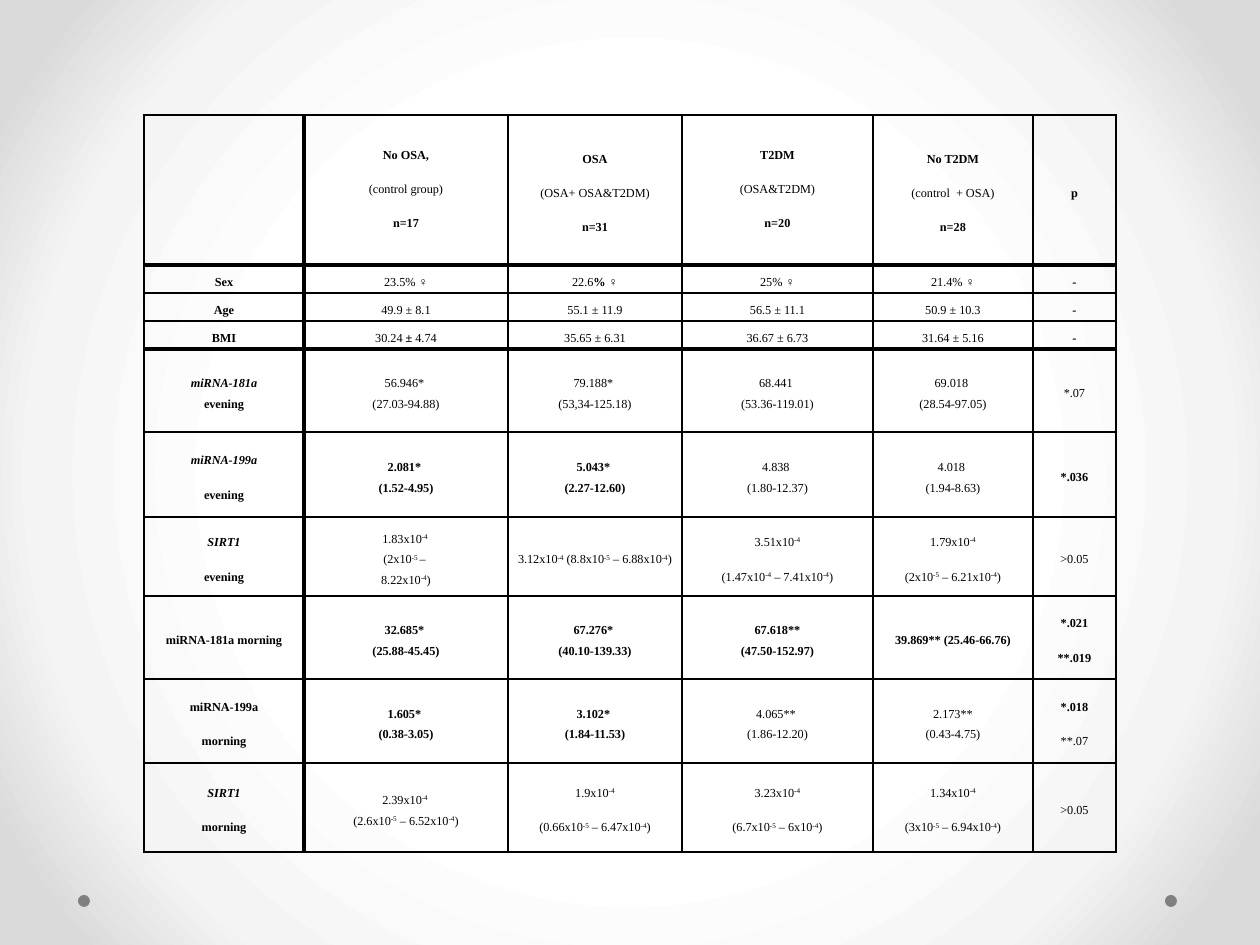
"""Build a slide with a table of miRNA and SIRT1 values by patient group."""
from dataclasses import dataclass

from lxml.etree import SubElement
from pptx import Presentation
from pptx.dml.color import RGBColor
from pptx.enum.shapes import MSO_SHAPE
from pptx.enum.text import MSO_ANCHOR, PP_ALIGN
from pptx.oxml import parse_xml
from pptx.oxml.ns import nsdecls, qn
from pptx.slide import Slide
from pptx.table import _Cell
from pptx.text.text import _Paragraph
from pptx.util import Emu, Pt

SCALE = 914400 / 126
FONT, FONT_SIZE = "Times New Roman", Pt(7)
COLORS = {"ink": "000000", "dot": "808080", "center": "FFFFFF", "middle": "F4F4F4", "edge": "DADADA"}
BOLD, ITALIC, RAISED = "#", "_", "^"
THIN, THICK = Pt(1), Pt(3)
THICK_ROW_LINES, THICK_COLUMN_LINES = {1, 4}, {1}
COLUMN_WIDTHS = [160, 204, 174, 191, 160, 83]
TABLE_LEFT, TABLE_TOP = 144, 115


@dataclass(frozen=True)
class Row:
    """One table row, with | between paragraphs and #, _ and ^ switching bold, italic and superscript."""
    height: int
    label: str
    groups: tuple[str, str, str, str]
    significance: str


@dataclass(frozen=True)
class Dot:
    """A small round mark near the foot of the slide."""
    left: int
    top: int
    diameter: int = 12


ROWS = [
    Row(150, "", ("#No OSA,|#(control group)#|n=17#", "#OSA|#(OSA+ OSA&T2DM)#|n=31#",
                  "#T2DM|#(OSA&T2DM)#|n=20#", "#No T2DM|#(control  + OSA)#|n=28#"), "#p#"),
    Row(28, "Sex", ("23.5% ♀", "22.6#% ♀#", "25%# ♀#", "21.4% ♀"), "#-#"),
    Row(28, "Age", ("49.9 ± 8.1", "55.1 ± 11.9", "56.5 ± 11.1", "50.9 ± 10.3"), "#-#"),
    Row(28, "BMI", ("30.24# ± #4.74", "35.65 ± 6.31", "36.67 ± 6.73", "31.64 ± 5.16"), "#-#"),
    Row(83, "_miRNA-181a_\nevening", ("56.946* \n(27.03-94.88)", "79.188* \n(53,34-125.18)",
                                      "68.441 \n(53.36-119.01)", "69.018 \n(28.54-97.05)"), "*.07"),
    Row(85, "_miRNA-199a_|evening", ("#2.081* \n(1.52-4.95)#", "#5.043* \n(2.27-12.60)#",
                                     "4.838 \n(1.80-12.37)", "4.018 \n(1.94-8.63)"), "#*.036#"),
    Row(79, "_SIRT1_|evening", ("1.83x10^-4 \n^(2x10^-5 ^– \n8.22x10^-4^)",
                                "3.12x10^-4^ (8.8x10^-5^ – 6.88x10^-4^)",
                                "3.51x10^-4^|(1.47x10^-4^ – 7.41x10^-4^)",
                                "1.79x10^-4^|(2x10^-5^ – 6.21x10^-4^)"), ">0.05"),
    Row(83, "miRNA-181a morning", ("#32.685* \n(25.88-45.45)#", "#67.276* \n(40.10-139.33)#",
                                   "#67.618**\n(47.50-152.97)#", "#39.869** (25.46-66.76)#"),
        "#*.021|**.019#"),
    Row(84, "miRNA-199a|morning", ("#1.605* \n(0.38-3.05)#", "#3.102* \n(1.84-11.53)#",
                                   "4.065** \n(1.86-12.20)", "2.173**\n(0.43-4.75)"),
        "#*.018#|**.07"),
    Row(89, "_SIRT1_|morning", ("2.39x10^-4 \n^(2.6x10^-5^ – 6.52x10^-4^)",
                                "1.9x10^-4^|(0.66x10^-5^ – 6.47x10^-4^)",
                                "3.23x10^-4^|(6.7x10^-5^ – 6x10^-4^)",
                                "1.34x10^-4^|(3x10^-5^ – 6.94x10^-4^)"), ">0.05"),
]
DOTS = [Dot(1165, 895), Dot(78, 895)]
RAISED_HEADERS = {(0, 1), (0, 3)}


def px(length: int) -> Emu:
    """Turn pixels into EMU."""
    return Emu(round(length * SCALE))


def paint_background(slide: Slide) -> None:
    """Fill the slide with a round gradient from its centre."""
    slide.background.fill.solid()
    stops = "".join(
        f'<a:gs pos="{position}000"><a:srgbClr val="{COLORS[name]}"/></a:gs>'
        for position, name in ((50, "center"), (76, "middle"), (92, "edge")))
    gradient = parse_xml(
        f'<a:gradFill {nsdecls("a")} rotWithShape="1"><a:gsLst>{stops}</a:gsLst><a:path path="circle">'
        '<a:fillToRect l="50000" t="50000" r="50000" b="50000"/></a:path></a:gradFill>')
    properties = slide.element.find(".//" + qn("p:bgPr"))
    properties.replace(properties[0], gradient)


def add_dot(slide: Slide, dot: Dot) -> None:
    """Draw one round mark."""
    shape = slide.shapes.add_shape(
        MSO_SHAPE.OVAL, px(dot.left), px(dot.top), px(dot.diameter), px(dot.diameter))
    shape.shadow.inherit = False
    shape.fill.solid()
    shape.fill.fore_color.rgb = RGBColor.from_string(COLORS["dot"])
    shape.line.fill.background()


def add_span(para: _Paragraph, text: str, styles: set[str]) -> None:
    """Add text in one style, with its line breaks."""
    for index, line in enumerate(text.split("\n")):
        if index:
            line_break = para._p.add_br()
            SubElement(line_break, qn("a:rPr"), sz=str(int(FONT_SIZE.pt * 100)))
        if line:
            span = para.add_run()
            span.text = line
            span.font.name, span.font.size = FONT, FONT_SIZE
            span.font.bold, span.font.italic = BOLD in styles, ITALIC in styles
            span.font.color.rgb = RGBColor.from_string(COLORS["ink"])
            if RAISED in styles:
                span.font._element.set("baseline", "30000")


def write_cell(cell: _Cell, markup: str, styles: set[str]) -> None:
    """Write marked-up paragraphs into a cell."""
    cell.vertical_anchor = MSO_ANCHOR.MIDDLE
    cell.margin_left = cell.margin_right = px(6)
    cell.margin_top = cell.margin_bottom = 0
    frame = cell.text_frame
    for index, content in enumerate(markup.split("|")):
        para = frame.add_paragraph() if index else frame.paragraphs[0]
        para.alignment = PP_ALIGN.CENTER
        para.line_spacing, para.space_after = 1.5, Pt(8)
        text = ""
        for character in content:
            if character in (BOLD, ITALIC, RAISED):
                add_span(para, text, styles)
                styles, text = styles ^ {character}, ""
            else:
                text += character
        add_span(para, text, styles)


def draw_borders(cell: _Cell, row: int, column: int) -> None:
    """Rule the four sides of a cell."""
    sides = {"L": column in THICK_COLUMN_LINES, "R": column + 1 in THICK_COLUMN_LINES,
             "T": row in THICK_ROW_LINES, "B": row + 1 in THICK_ROW_LINES}
    for side, is_thick in sides.items():
        border = SubElement(cell._tc.get_or_add_tcPr(), qn(f"a:ln{side}"), w=str(THICK if is_thick else THIN))
        SubElement(SubElement(border, qn("a:solidFill")), qn("a:srgbClr"), val=COLORS["ink"])


def add_results_table(slide: Slide, rows: list[Row]) -> None:
    """Add the table of group values."""
    frame = slide.shapes.add_table(
        len(rows), len(COLUMN_WIDTHS), px(TABLE_LEFT), px(TABLE_TOP),
        px(sum(COLUMN_WIDTHS)), px(sum(row.height for row in rows)))
    table = frame.table
    table.first_row = table.horz_banding = False
    for column, width in zip(table.columns, COLUMN_WIDTHS):
        column.width = px(width)
    for row_index, row in enumerate(rows):
        table.rows[row_index].height = px(row.height)
        for column_index, markup in enumerate((row.label, *row.groups, row.significance)):
            cell = table.cell(row_index, column_index)
            write_cell(cell, markup, set() if column_index else {BOLD})
            if (row_index, column_index) in RAISED_HEADERS:
                cell.margin_bottom = px(8)
            draw_borders(cell, row_index, column_index)
            cell.fill.background()


def main() -> None:
    """Build and save the deck."""
    deck = Presentation()
    deck.slide_width, deck.slide_height = px(1260), px(945)
    page = deck.slides.add_slide(deck.slide_layouts[6])
    paint_background(page)
    for dot in DOTS:
        add_dot(page, dot)
    add_results_table(page, ROWS)
    deck.save("out.pptx")


if __name__ == "__main__":
    main()
